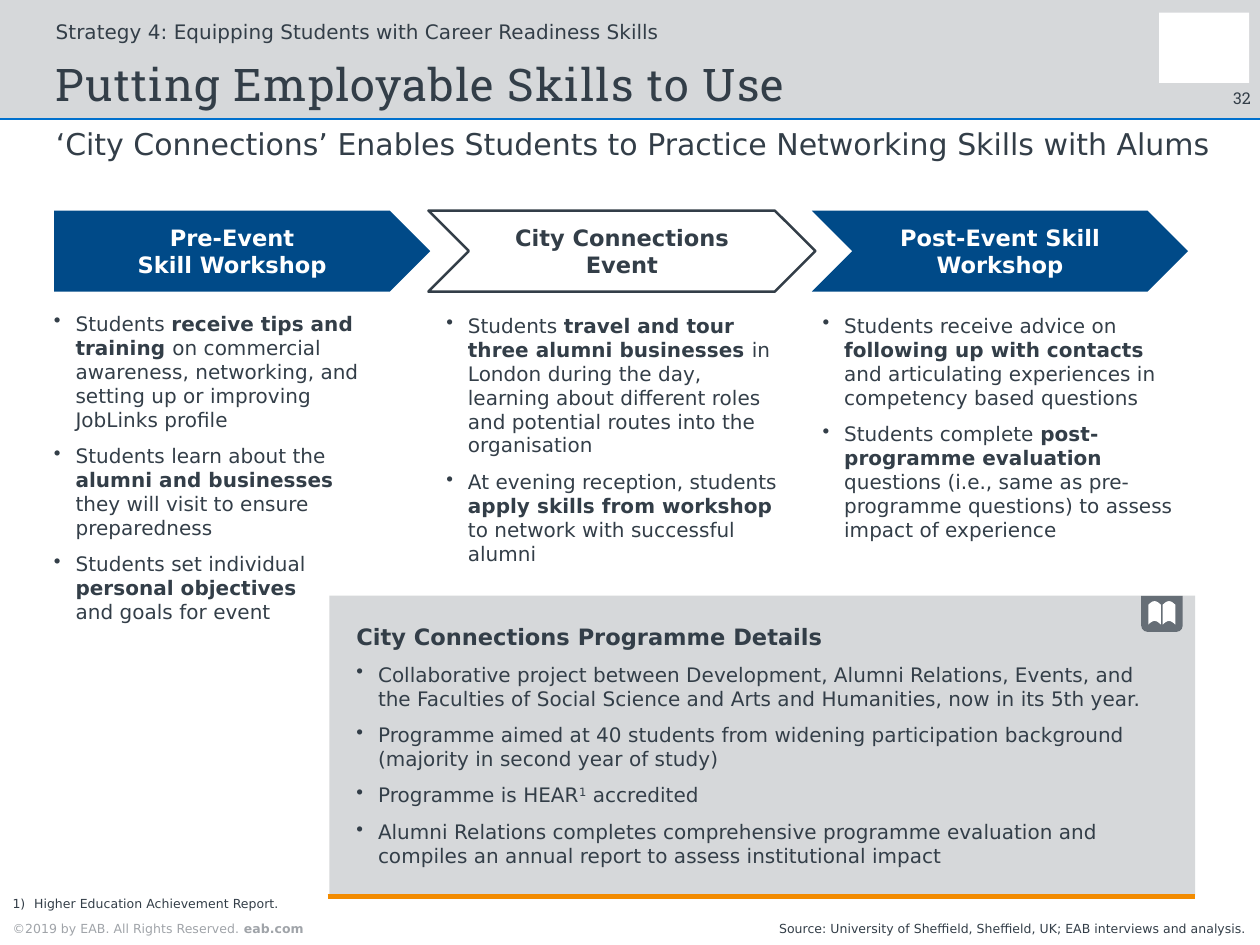
import math
from lxml import etree
from pptx import Presentation
from pptx.dml.color import RGBColor
from pptx.enum import shapes, text
from pptx.oxml import ns
from pptx.util import Inches, Pt

INK = RGBColor(0x33, 0x3E, 0x48)
WHITE = RGBColor(0xFF, 0xFF, 0xFF)
PALE = RGBColor(0xD6, 0xD8, 0xDA)
MUTED = RGBColor(0xA0, 0xA4, 0xA9)
SLATE = RGBColor(0x66, 0x6E, 0x76)
NAVY = RGBColor(0x00, 0x4A, 0x88)
BLUE = RGBColor(0x00, 0x70, 0xCD)
ORANGE = RGBColor(0xF2, 0x8B, 0x00)
SANS, SLAB = "DejaVu Sans", "Roboto Slab"
SHAPE, ALIGN, ANCHOR = shapes.MSO_SHAPE, text.PP_ALIGN, text.MSO_ANCHOR

TITLE = "Putting Employable Skills to Use"
STRATEGY = "Strategy 4: Equipping Students with Career Readiness Skills"
SUBTITLE = "‘City Connections’ Enables Students to Practice Networking Skills with Alums"
SOURCE = "Source: University of Sheffield, Sheffield, UK; EAB interviews and analysis."
FOOTNOTE = "Higher Education Achievement Report."
COPYRIGHT = [("©2019 by EAB. All Rights Reserved. ", ""), ("eab.com", "bold")]

STAGES = [
    {"head": "Pre-Event\nSkill Workshop", "arrow": (SHAPE.PENTAGON, 0.3, 2.09),
     "colours": (NAVY, None, WHITE), "column": (0.3, 1.73, 1.86, 1.76),
     "points": [
         [("Students ", ""), ("receive tips and training ", "bold"),
          ("on commercial awareness, networking, and setting up or improving JobLinks profile", "")],
         [("Students learn about the ", ""), ("alumni and businesses\n", "bold"),
          ("they will visit to ensure preparedness", "")],
         [("Students set individual ", ""), ("personal objectives\n", "bold"),
          ("and goals for event", "")]]},
    {"head": "City Connections Event", "arrow": (SHAPE.CHEVRON, 2.38, 2.15),
     "colours": (WHITE, INK, INK), "column": (2.48, 1.74, 1.86, 1.42),
     "points": [
         [("Students ", ""), ("travel and tour three alumni businesses ", "bold"),
          ("in London during the day, learning about different roles and potential "
           "routes into the organisation", "")],
         [("At evening reception, students ", ""), ("apply skills from workshop ", "bold"),
          ("to network with successful alumni", "")]]},
    {"head": "Post-Event Skill Workshop", "arrow": (SHAPE.CHEVRON, 4.51, 2.09),
     "colours": (NAVY, None, WHITE), "column": (4.57, 1.74, 2.03, 1.28),
     "points": [
         [("Students receive advice on ", ""), ("following up with contacts ", "bold"),
          ("and articulating experiences in competency based questions", "")],
         [("Students complete ", ""), ("post-programme evaluation ", "bold"),
          ("questions (i.e., same as pre-programme questions) to assess impact of experience", "")]]},
]
DETAILS_HEAD = "City Connections Programme Details"
DETAILS = [
    [("Collaborative project between Development, Alumni Relations, Events, and the "
      "Faculties of Social Science and Arts and Humanities, now in its 5th year.", "")],
    [("Programme aimed at 40 students from widening participation background "
      "(majority in second year of study)", "")],
    [("Programme is HEAR", ""), ("1", "super"), (" accredited", "")],
    [("Alumni Relations completes comprehensive programme evaluation and compiles an "
      "annual report to assess institutional impact", "")],
]

deck = Presentation()
deck.slide_width, deck.slide_height = Inches(7), Inches(5.25)
page = deck.slides.add_slide(deck.slide_layouts[5])


def paint(shape, fill, line=None, width=1):
    shape.shadow.inherit = False
    shape.fill.solid()
    shape.fill.fore_color.rgb = fill
    if line is None:
        shape.line.fill.background()
    else:
        shape.line.color.rgb = line
        shape.line.width = Pt(width)


def add_block(kind, place, fill, line=None):
    shape = page.shapes.add_shape(kind, *map(Inches, place))
    paint(shape, fill, line)
    return shape


def add_rule(x1, x2, y, colour, width):
    rule = page.shapes.add_connector(shapes.MSO_CONNECTOR.STRAIGHT,
                                     *map(Inches, (x1, y, x2, y)))
    rule.line.color.rgb = colour
    rule.line.width = Pt(width)
    etree.SubElement(rule._element.spPr, ns.qn("a:effectLst"))


def set_frame(box, insets=(0, 0, 0, 0), anchor=ANCHOR.TOP):
    frame = box.text_frame
    frame.word_wrap = True
    frame.auto_size = text.MSO_AUTO_SIZE.NONE
    frame.vertical_anchor = anchor
    (frame.margin_left, frame.margin_top,
     frame.margin_right, frame.margin_bottom) = map(Inches, insets)
    return frame


def write(frame, spans, size, colour=INK, font=SANS, align=ALIGN.LEFT, bullet=None):
    para = frame.paragraphs[0]
    if para.runs:
        para = frame.add_paragraph()
        para.space_before = Pt(5)
    para.alignment = align
    if bullet:
        props = para._p.get_or_add_pPr()
        props.set("marL", str(Inches(0.12)))
        props.set("indent", str(-Inches(0.12)))
        tag, key, value = bullet
        etree.SubElement(props, ns.qn(tag)).set(key, value)
    for words, style in [(spans, "")] if isinstance(spans, str) else spans:
        for index, part in enumerate(words.split("\n")):
            if index:
                para.add_line_break()
            if not part:
                continue
            span = para.add_run()
            span.text = part
            span.font.name, span.font.size = font, Pt(size)
            span.font.color.rgb = colour
            span.font.bold = style == "bold"
            if style == "super":
                span._r.get_or_add_rPr().set("baseline", "30000")
    return para


def add_label(place, spans, size, insets=(0, 0, 0, 0), anchor=ANCHOR.TOP, **look):
    box = page.shapes.add_textbox(*map(Inches, place))
    write(set_frame(box, insets, anchor), spans, size, **look)


DOT = ("a:buChar", "char", "•")
NUMBER = ("a:buAutoNum", "type", "arabicParenR")

add_block(SHAPE.RECTANGLE, (0, 0, 7, 0.66), PALE)
add_rule(0, 7, 0.66, BLUE, 0.75)
add_block(SHAPE.RECTANGLE, (6.44, 0.07, 0.5, 0.39), WHITE)
add_label((6.74, 0.49, 0.26, 0.11), "32", 6.5, (0, 0, 0.05, 0), ANCHOR.MIDDLE,
          font=SLAB, align=ALIGN.RIGHT)

title = page.shapes.title
page.shapes._spTree.append(title._element)
title.left, title.top, title.width, title.height = map(Inches, (0.31, 0.34, 6, 0.28))
heading = write(set_frame(title, anchor=ANCHOR.BOTTOM), TITLE, 18, font=SLAB)
heading.line_spacing = 0.9
heading.runs[0]._r.get_or_add_rPr().set("spc", "50")

add_label((0.31, 0.04, 3.67, 0.27), STRATEGY, 8, anchor=ANCHOR.MIDDLE)
add_label((0.31, 0.7, 6.51, 0.4), SUBTITLE, 12)

for stage in STAGES:
    kind, left, width = stage["arrow"]
    fill, line, ink = stage["colours"]
    arrow = add_block(kind, (left, 1.17, width, 0.45), fill, line)
    write(set_frame(arrow, (0.1, 0.05, 0.1, 0.05), ANCHOR.MIDDLE),
          [(stage["head"], "bold")], 9, ink, align=ALIGN.CENTER)
    column = set_frame(page.shapes.add_textbox(*map(Inches, stage["column"])))
    for point in stage["points"]:
        write(column, point, 8, bullet=DOT)

panel = add_block(SHAPE.RECTANGLE, (1.83, 3.31, 4.81, 1.67), PALE)
details = set_frame(panel, (0.15, 0.15, 0.15, 0.15))
write(details, [(DETAILS_HEAD, "bold")], 9)
for point in DETAILS:
    write(details, point, 8, bullet=DOT)
add_rule(1.82, 6.64, 4.98, ORANGE, 2.25)

badge = add_block(SHAPE.ROUND_2_SAME_RECTANGLE, (6.34, 3.31, 0.23, 0.2), SLATE)
badge.rotation = 180
STEPS = [step / 8 for step in range(9)]
for left in (6.38, 6.46):
    arch = [(left + 0.07 * t, 0.02 * math.sin(math.pi * t)) for t in STEPS]
    outline = [(x, 3.36 - rise) for x, rise in arch]
    outline += [(x, 3.47 - rise) for x, rise in reversed(arch)]
    points = [(Inches(x), Inches(y)) for x, y in outline]
    builder = page.shapes.build_freeform(*points[0])
    builder.add_line_segments(points[1:], close=True)
    paint(builder.convert_to_shape(), WHITE)

add_label((0, 4.98, 2.24, 0.08), FOOTNOTE, 5, (0.07, 0, 0, 0), ANCHOR.BOTTOM, bullet=NUMBER)
add_label((0, 5.12, 2.27, 0.13), COPYRIGHT, 5, (0.07, 0, 0.07, 0.05), ANCHOR.BOTTOM,
          colour=MUTED)
add_label((3.6, 5.12, 3.4, 0.13), SOURCE, 5, (0, 0, 0.07, 0.05), ANCHOR.BOTTOM,
          align=ALIGN.RIGHT)

deck.save("out.pptx")
